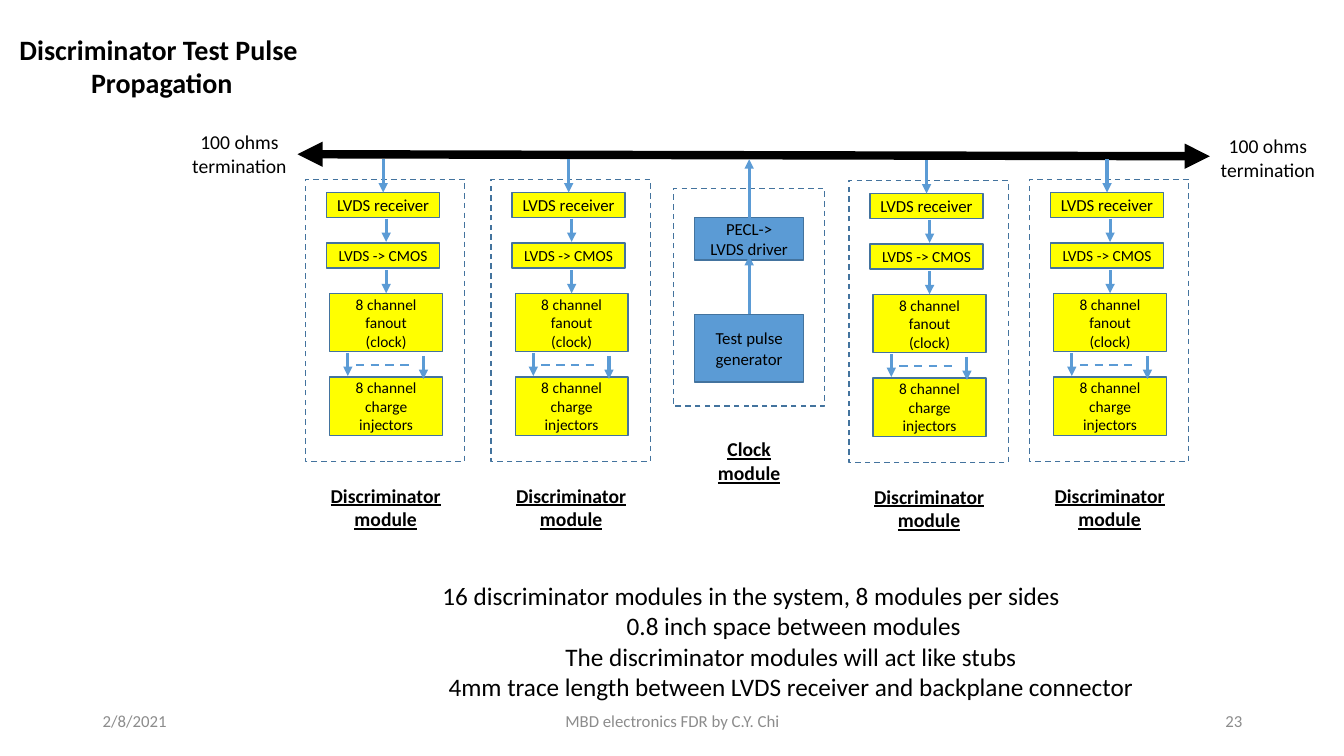
"""Build the slide on how test pulses reach the discriminator modules."""
import pptx
import pptx.util
import pptx.dml.color
import pptx.enum.dml
import pptx.enum.shapes
import pptx.enum.text
import pptx.oxml
import pptx.oxml.ns

PX = 9144
RGB = pptx.dml.color.RGBColor
BLACK = RGB(0, 0, 0)
BLUE = RGB(0x5B, 0x9B, 0xD5)
EDGE = RGB(0x43, 0x73, 0x9E)
YELLOW = RGB(0xFF, 0xFF, 0)
GREY = RGB(0x8C, 0x8C, 0x8C)
DASH = pptx.enum.dml.MSO_LINE.DASH
ANCHOR = pptx.enum.text.MSO_ANCHOR
LEFT = pptx.enum.text.PP_ALIGN.LEFT
MID = pptx.enum.text.PP_ALIGN.CENTER
RIGHT = pptx.enum.text.PP_ALIGN.RIGHT
Pt = pptx.util.Pt

deck = pptx.Presentation()
deck.slide_width = 1333 * PX
deck.slide_height = 750 * PX
slide = deck.slides.add_slide(deck.slide_layouts[5])
shapes = slide.shapes


def box(x, y, w, h, fill=None, text="", size=12):
    """Draw a filled box with text, or a dashed frame if there is no fill."""
    rect = shapes.add_shape(pptx.enum.shapes.MSO_SHAPE.RECTANGLE,
                            x * PX, y * PX, w * PX, h * PX)
    rect.shadow.inherit = False
    rect.line.color.rgb = EDGE
    rect.line.width = Pt(1)
    if fill is None:
        rect.fill.background()
        rect.line.dash_style = DASH
        return rect
    rect.fill.solid()
    rect.fill.fore_color.rgb = fill
    frame = rect.text_frame
    frame.margin_left = frame.margin_right = 8 * PX
    frame.vertical_anchor = ANCHOR.MIDDLE
    frame.text = text
    for para in frame.paragraphs:
        para.alignment = MID
        para.font.name = "Calibri"
        para.font.size = Pt(size)
        para.font.color.rgb = BLACK
    return rect


def wire(x1, y1, x2, y2, color=BLUE, width=2.25, ends=("tailEnd",)):
    """Draw a straight line with arrowheads at the named ends."""
    line = shapes.add_connector(pptx.enum.shapes.MSO_CONNECTOR.STRAIGHT,
                                x1 * PX, y1 * PX, x2 * PX, y2 * PX)
    line.line.color.rgb = color
    line.line.width = Pt(width)
    for end in ends:
        head = pptx.oxml.parse_xml(
            f'<a:{end} {pptx.oxml.ns.nsdecls("a")} type="triangle"/>')
        line.line._get_or_add_ln().append(head)
    glow = pptx.oxml.parse_xml(f'<a:effectLst {pptx.oxml.ns.nsdecls("a")}/>')
    line._element.spPr.append(glow)
    return line


wire(295, 153, 1200, 155, BLACK, 6, ("headEnd", "tailEnd"))

box(668, 187, 150, 216)
driver = box(689, 216, 108, 42, BLUE, "PECL->\nLVDS driver")
source = box(689, 312, 108, 67, BLUE, "Test pulse\ngenerator")
wire(743, 216, 743, 158).begin_connect(driver, 0)
wire(743, 312, 743, 254).begin_connect(source, 0)

title = shapes.title
title.left, title.top, title.width, title.height = (
    v * PX for v in (8, 27, 305, 77))
labels = [
    (title, "Discriminator Test Pulse \nPropagation", 20, True, False),
    ((180, 124, 115, 57), "100 ohms\ntermination", 14, False, False),
    ((1200, 128, 115, 57), "100 ohms\ntermination", 14, False, False),
    ((702, 429, 82, 57), "Clock\nmodule", 14, True, True),
    ((429, 571, 711, 131),
     "16 discriminator modules in the system, 8 modules per sides\n"
     " 0.8 inch space between modules\n"
     "The discriminator modules will act like stubs\n"
     "4mm trace length between LVDS receiver and backplane connector",
     18, False, False),
]

for x, y in ((303, 178), (487, 178), (842, 179), (1021, 178)):
    box(x, y, 158, 280)
    input = box(x + 21, y + 13, 112, 25, YELLOW, "LVDS receiver")
    box(x + 21, y + 63, 112, 25, YELLOW, "LVDS -> CMOS", 11)
    fanout = box(x + 24, y + 113, 112, 58, YELLOW,
                 "8 channel fanout\n(clock)", 11)
    box(x + 24, y + 196, 112, 58, YELLOW, "8 channel charge injectors", 11)
    wire(x + 77, y - 20, x + 77, y + 13).end_connect(input, 0)
    wire(x + 80, y + 90, x + 80, y + 113).end_connect(fanout, 0)
    for dx, dy in ((80, 39), (42, 172), (117, 175)):
        wire(x + dx, y + dy, x + dx, y + dy + 23)
    gap = wire(x + 50, y + 184, x + 108, y + 184, width=1.5, ends=())
    gap.line.dash_style = DASH
    labels.append(((x + 14, y + 297, 131, 57),
                   "Discriminator\nmodule", 14, True, True))

for spot, text, size, bold, under in labels:
    label = spot if spot is title else shapes.add_textbox(
        *(v * PX for v in spot))
    frame = label.text_frame
    frame.word_wrap = False
    frame.auto_size = pptx.enum.text.MSO_AUTO_SIZE.NONE
    frame.vertical_anchor = ANCHOR.TOP
    frame.text = text
    for para in frame.paragraphs:
        para.alignment = LEFT if para.text.startswith("16") else MID
        para.font.name = "Calibri"
        para.font.size = Pt(size)
        para.font.bold = bold
        para.font.underline = under
        para.font.color.rgb = BLACK

for x, w, text, align in ((92, 300, "2/8/2021", LEFT),
                          (442, 450, "MBD electronics FDR by C.Y. Chi", MID),
                          (942, 300, "23", RIGHT)):
    frame = shapes.add_textbox(x * PX, 695 * PX, w * PX, 40 * PX).text_frame
    frame.word_wrap = True
    frame.vertical_anchor = ANCHOR.MIDDLE
    frame.text = text
    para = frame.paragraphs[0]
    para.alignment = align
    para.font.name = "Calibri"
    para.font.size = Pt(12)
    para.font.color.rgb = GREY

deck.save("out.pptx")
